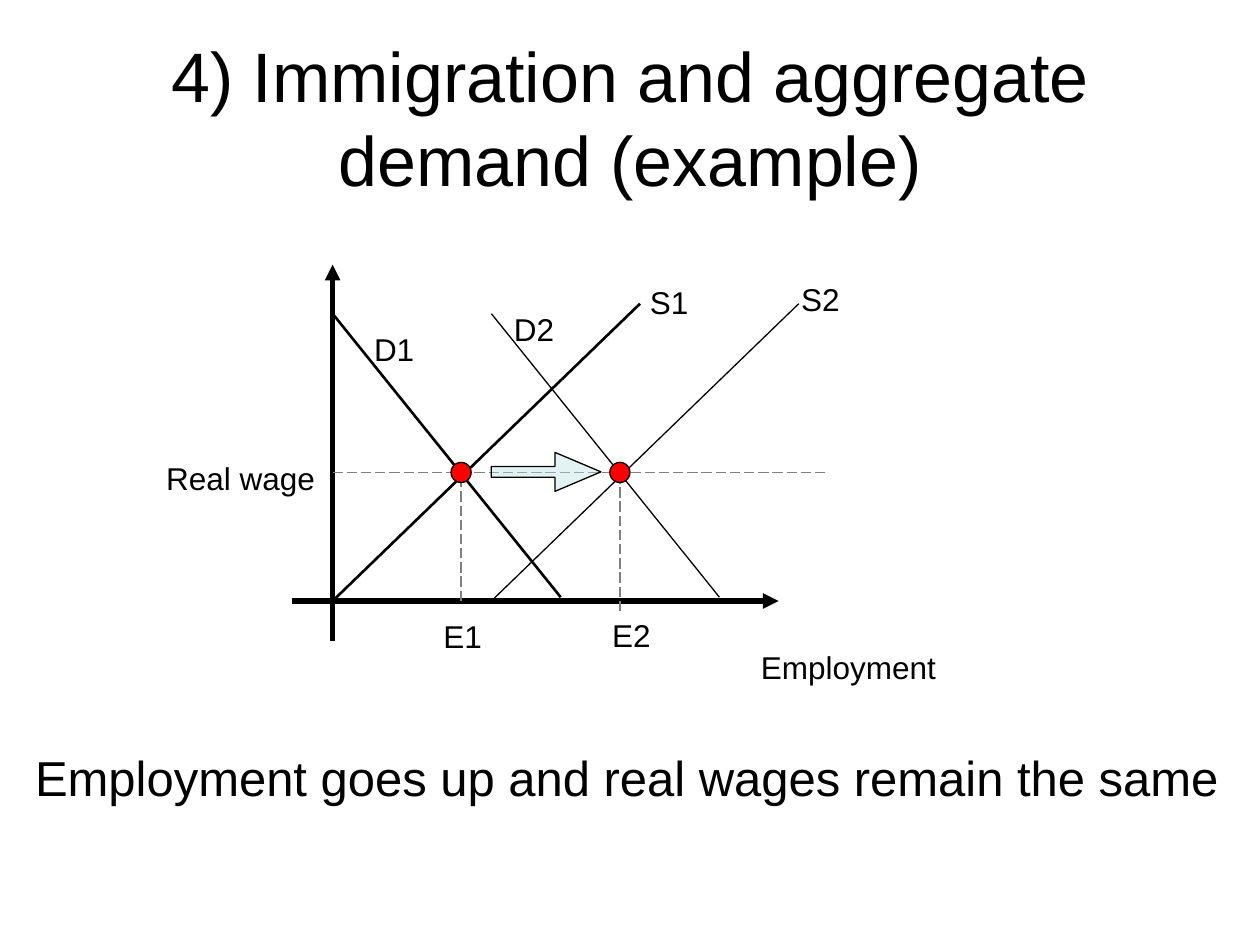
import pptx
import pptx.util
import pptx.dml.color
import pptx.enum.dml
import pptx.enum.shapes
import pptx.enum.text
import pptx.oxml
import pptx.oxml.ns

Inches, Pt = pptx.util.Inches, pptx.util.Pt
Shape = pptx.enum.shapes.MSO_SHAPE
Align = pptx.enum.text.PP_ALIGN
Anchor = pptx.enum.text.MSO_ANCHOR

# Content
title = "4) Immigration and aggregate demand (example)"
claim = "Employment goes up and real wages remain the same"
labels = [  # text, left, top, width
    ("S1", 5.06, 2.2, 0.51), ("D1", 2.87, 2.57, 0.52),
    ("S2", 6.26, 2.17, 0.51), ("D2", 3.98, 2.41, 0.52),
    ("E1", 3.42, 4.85, 0.51), ("E2", 4.76, 4.84, 0.51),
    ("Real wage", 1.22, 3.59, 1.39), ("Employment", 5.94, 5.09, 1.6),
]

# Graph: origin, equilibrium wage and the shift of both curves
left, base, wage = 2.64, 4.77, 3.75
shift, first, dot = 1.26, 3.66, 0.16
axes = [((left, 5.09), (left, 2.1)), ((2.32, base), (6.18, base))]
curves = [((left, base), (5.08, 2.41)), ((left, 2.49), (4.45, 4.74))]
guides = [((left, wage), (6.57, wage)),
          ((first, base), (first, wage)),
          ((first + shift, 4.85), (first + shift, 3.83))]

deck = pptx.Presentation()
deck.slide_width, deck.slide_height = Inches(10), Inches(7.5)
slide = deck.slides.add_slide(deck.slide_layouts[6])


def color(code):
    return pptx.dml.color.RGBColor.from_string(code)


def element(parent, tag, **attrs):
    item = pptx.oxml.parse_xml(f"<a:{tag} {pptx.oxml.ns.nsdecls('a')}/>")
    for key, value in attrs.items():
        item.set(key, value)
    parent.append(item)


def text(words, x, y, w, h, size=18, align=Align.LEFT, anchor=Anchor.TOP,
         wrap=False):
    box = slide.shapes.add_textbox(Inches(x), Inches(y), Inches(w), Inches(h))
    frame = box.text_frame
    frame.word_wrap, frame.vertical_anchor = wrap, anchor
    para = frame.paragraphs[0]
    para.alignment = align
    run = para.add_run()
    run.text = words
    run.font.name, run.font.size = "Arial", Pt(size)
    run.font.color.rgb = color("000000")


def line(start, end, width=0.75, ink="000000", dash=False, head=False):
    link = slide.shapes.add_connector(
        pptx.enum.shapes.MSO_CONNECTOR.STRAIGHT,
        *[Inches(v) for v in (*start, *end)])
    link.line.width = Pt(width)
    link.line.color.rgb = color(ink)
    if dash:
        link.line.dash_style = pptx.enum.dml.MSO_LINE.LONG_DASH
    if head:
        element(link.line._get_or_add_ln(), "tailEnd", type="triangle")
    element(link._element.spPr, "effectLst")


def shape(kind, x, y, w, h, fill):
    item = slide.shapes.add_shape(
        kind, Inches(x), Inches(y), Inches(w), Inches(h))
    item.shadow.inherit = False
    item.fill.solid()
    item.fill.fore_color.rgb = color(fill)
    item.line.color.rgb = color("000000")
    item.line.width = Pt(0.75)
    return item


# Title
text(title, 0.5, 0.3, 9, 1.25, size=40, align=Align.CENTER,
     anchor=Anchor.MIDDLE, wrap=True)

# Axes, curves before and after the shift, dashed guides
for start, end in axes:
    line(start, end, width=3, head=True)
for start, end in curves:
    line(start, end, width=1.5)
    line((start[0] + shift, start[1]), (end[0] + shift, end[1]))
for start, end in guides:
    line(start, end, ink="808080", dash=True)

# Labels and conclusion
for words, x, y, w in labels:
    text(words, x, y, w, 0.4)
text(claim, 0.18, 5.88, 9.82, 0.57, size=28)

# Shift arrow, see-through
arrow = shape(Shape.RIGHT_ARROW, 3.9, 3.59, 0.87, 0.31, "BBE0E3")
arrow.adjustments[0], arrow.adjustments[1] = 0.28, 1.18
tint = arrow._element.spPr.find(
    pptx.oxml.ns.qn("a:solidFill")).find(pptx.oxml.ns.qn("a:srgbClr"))
element(tint, "alpha", val="40000")

# Equilibrium points
for x in (first, first + shift):
    shape(Shape.OVAL, x - dot / 2, wage - dot / 2, dot, dot, "FF0000")

deck.save("out.pptx")
